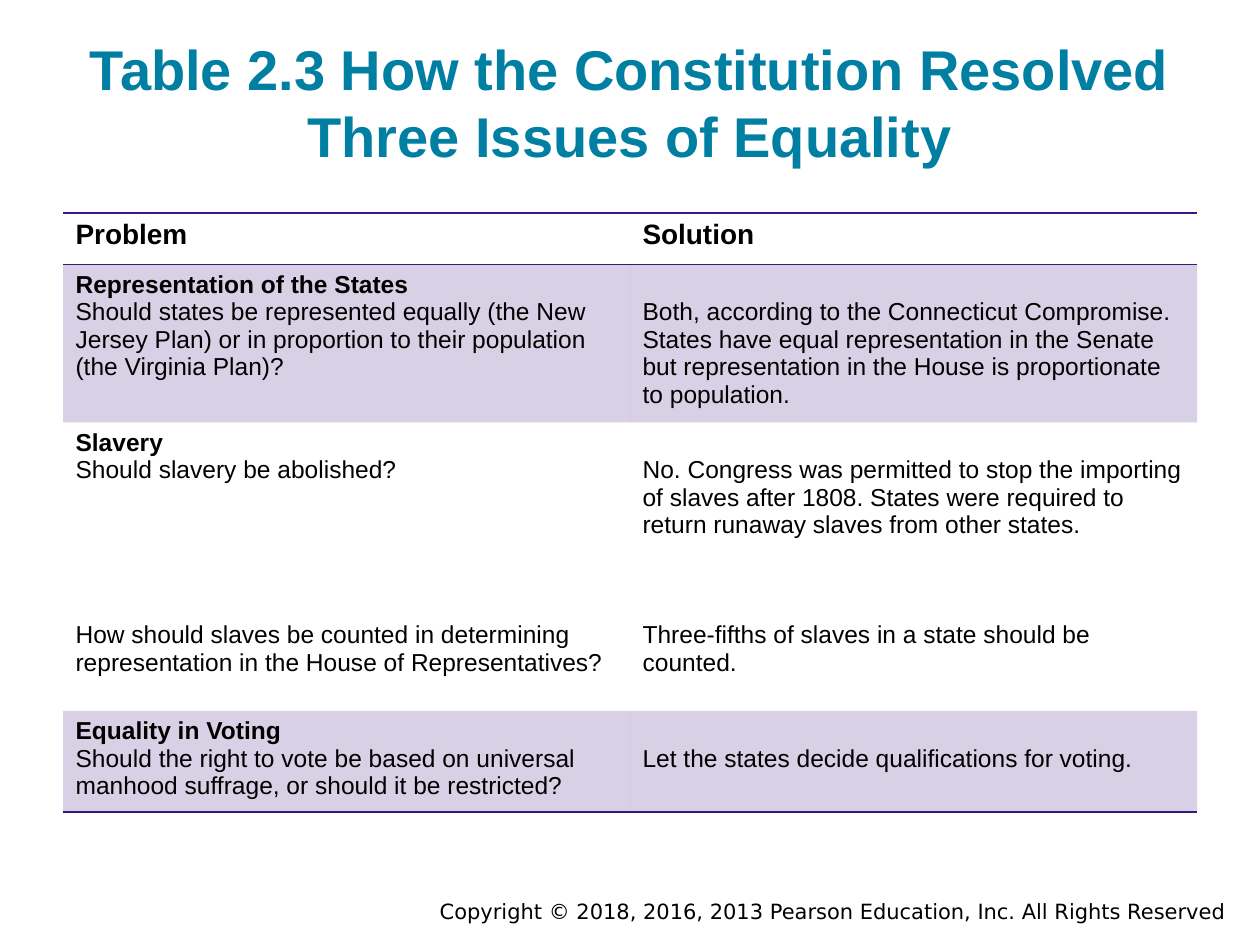
from pptx import Presentation
from pptx.dml.color import RGBColor
from pptx.enum.text import MSO_ANCHOR, PP_ALIGN
from pptx.oxml.ns import qn
from pptx.util import Inches, Pt
from lxml.etree import SubElement

COLORS = {"title": "007FA3", "text": "000000", "accent": "3C1581"}
BAND_ALPHA = 20
BODY_SIZE = 14
LINE_PT = 15.75  # height of one body line

TITLE = "Table 2.3 How the Constitution Resolved Three Issues of Equality"
COPYRIGHT = "Copyright © 2018, 2016, 2013 Pearson Education, Inc. All Rights Reserved"
HEADINGS = ("Problem", "Solution")

# Each answer starts one line down, beside its question.
# Paragraphs are (text, lines left free above).
ISSUES = [
    {"topic": "Representation of the States", "height": 1.19, "banded": True,
     "questions": [("Should states be represented equally (the New Jersey Plan) or in "
                    "proportion to their population (the Virginia Plan)?", 0)],
     "answers": [("Both, according to the Connecticut Compromise. States have equal "
                  "representation in the Senate but representation in the House is "
                  "proportionate to population.", 0)]},
    {"topic": "Slavery", "height": 2.29, "banded": False,
     "questions": [("Should slavery be abolished?", 0),
                   ("How should slaves be counted in determining representation in "
                    "the House of Representatives?", 5)],
     "answers": [("No. Congress was permitted to stop the importing of slaves after "
                  "1808. States were required to return runaway slaves from other "
                  "states.", 0),
                 ("Three-fifths of slaves in a state should be counted.", 3)]},
    {"topic": "Equality in Voting", "height": 0.75, "banded": True,
     "questions": [("Should the right to vote be based on universal manhood suffrage, "
                    "or should it be restricted?", 0)],
     "answers": [("Let the states decide qualifications for voting.", 0)]},
]
HEADER_HEIGHT = 0.41


def style(paragraph, size, color="text", bold=False, font="Arial"):
    paragraph.font.name = font
    paragraph.font.size = Pt(size)
    paragraph.font.bold = bold
    paragraph.font.color.rgb = RGBColor.from_string(COLORS[color])


def add_line_of_text(slide, text, box, align, anchor, inset):
    frame = slide.shapes.add_textbox(*map(Inches, box)).text_frame
    frame.word_wrap = True
    frame.vertical_anchor = anchor
    frame.margin_top = frame.margin_bottom = Inches(inset)
    paragraph = frame.paragraphs[0]
    paragraph.text = text
    paragraph.alignment = align
    return paragraph


def fill_cell(cell, paragraphs, size=BODY_SIZE):
    """Write (text, free lines above, bold) paragraphs into a cell."""
    for index, (text, free_lines, bold) in enumerate(paragraphs):
        frame = cell.text_frame
        paragraph = frame.add_paragraph() if index else frame.paragraphs[0]
        paragraph.text = text
        if free_lines:
            paragraph.space_before = Pt(free_lines * LINE_PT)
        style(paragraph, size, bold=bold)


def paint_cell(cell, ruled_sides, banded):
    """Rule the named sides, clear the others, and tint banded cells."""
    properties = cell._tc.get_or_add_tcPr()
    for side in "LRTB":
        line = SubElement(properties, qn(f"a:ln{side}"), w=str(Pt(1)))
        if side in ruled_sides:
            solid = SubElement(line, qn("a:solidFill"))
            SubElement(solid, qn("a:srgbClr"), val=COLORS["accent"])
        else:
            SubElement(line, qn("a:noFill"))
    if banded:
        cell.fill.solid()
        cell.fill.fore_color.rgb = RGBColor.from_string(COLORS["accent"])
        tint = properties.find(qn("a:solidFill")).find(qn("a:srgbClr"))
        SubElement(tint, qn("a:alpha"), val=str(BAND_ALPHA * 1000))
    else:
        cell.fill.background()


def add_issue_table(slide):
    heights = [HEADER_HEIGHT] + [issue["height"] for issue in ISSUES]
    table = slide.shapes.add_table(
        len(heights), len(HEADINGS),
        Inches(0.5), Inches(1.69), Inches(9), Inches(sum(heights))).table
    table.first_row = table.horz_banding = False
    for row, height in zip(table.rows, heights):
        row.height = Inches(height)

    for column, heading in enumerate(HEADINGS):
        cell = table.cell(0, column)
        fill_cell(cell, [(heading, 0, True)], size=16)
        paint_cell(cell, "TB", False)

    for row, issue in enumerate(ISSUES, start=1):
        problem, solution = table.cell(row, 0), table.cell(row, 1)
        fill_cell(problem, [(issue["topic"], 0, True)]
                  + [(*question, False) for question in issue["questions"]])
        fill_cell(solution, [(*answer, False) for answer in issue["answers"]])
        solution.margin_top = Inches(0.05) + Pt(LINE_PT)
        ruled_sides = {1: "T", len(ISSUES): "B"}.get(row, "")
        for cell in (problem, solution):
            paint_cell(cell, ruled_sides, issue["banded"])


def main():
    deck = Presentation()
    deck.slide_width, deck.slide_height = Inches(10), Inches(7.5)
    slide = deck.slides.add_slide(deck.slide_layouts[6])

    footer = add_line_of_text(slide, COPYRIGHT, (2, 7.08, 7.83, 0.3),
                              PP_ALIGN.RIGHT, MSO_ANCHOR.TOP, 0.05)
    style(footer, 12, font="DejaVu Sans")
    title = add_line_of_text(slide, TITLE, (0.5, 0.24, 9, 1.2),
                             PP_ALIGN.CENTER, MSO_ANCHOR.BOTTOM, 0.1)
    style(title, 32, "title", bold=True)
    add_issue_table(slide)
    deck.save("out.pptx")


if __name__ == "__main__":
    main()
